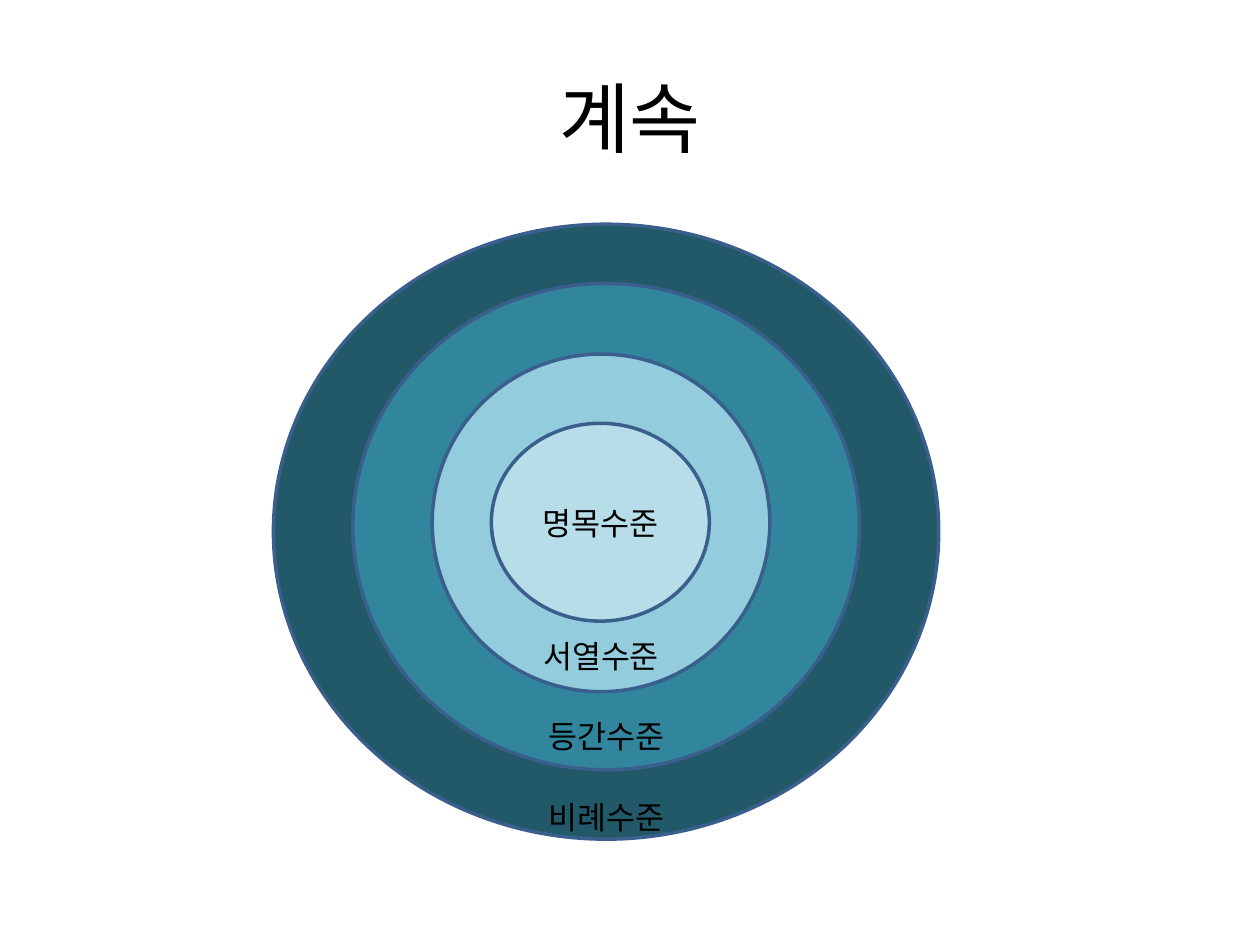
"""Build a slide of nested ellipses showing the four levels of measurement."""
from pptx import Presentation
from pptx.dml.color import RGBColor
from pptx.enum.shapes import MSO_SHAPE as Shape
from pptx.enum.text import MSO_ANCHOR as Anchor, PP_ALIGN as Align
from pptx.util import Inches, Pt


def color(hex_value):
    return RGBColor.from_string(hex_value)


def add_label(slide, text, left, top, width, height, size):
    frame = slide.shapes.add_textbox(
        Inches(left), Inches(top), Inches(width), Inches(height)).text_frame
    frame.word_wrap = True
    frame.vertical_anchor = Anchor.MIDDLE
    paragraph = frame.paragraphs[0]
    paragraph.alignment = Align.CENTER
    run = paragraph.add_run()
    run.text = text
    run.font.name = "Noto Sans CJK KR"
    run.font.size = Pt(size)
    run.font.color.rgb = color("000000")


LABEL_HEIGHT = 0.4
levels = [
    ("비례수준", 2.17, 1.78, 5.28, 4.88, "215968", 6.48),
    ("등간수준", 2.8, 2.25, 4.02, 3.86, "31859C", 5.84),
    ("서열수준", 3.43, 2.81, 2.68, 2.68, "93CDDD", 5.21),
    ("명목수준", 3.9, 3.36, 1.73, 1.57, "B7DEE8", 4.15),
]

presentation = Presentation()
presentation.slide_width = Inches(10)
presentation.slide_height = Inches(7.5)
slide = presentation.slides.add_slide(presentation.slide_layouts[6])

add_label(slide, "계속", 0.5, 0.3, 9, 1.25, 44)

for name, left, top, width, height, fill, label_middle in levels:
    ring = slide.shapes.add_shape(
        Shape.OVAL, Inches(left), Inches(top), Inches(width), Inches(height))
    ring.shadow.inherit = False
    ring.fill.solid()
    ring.fill.fore_color.rgb = color(fill)
    ring.line.color.rgb = color("3A5F8C")
    ring.line.width = Pt(2)
    add_label(slide, name, left, label_middle - LABEL_HEIGHT / 2,
              width, LABEL_HEIGHT, 18)

presentation.save("out.pptx")
